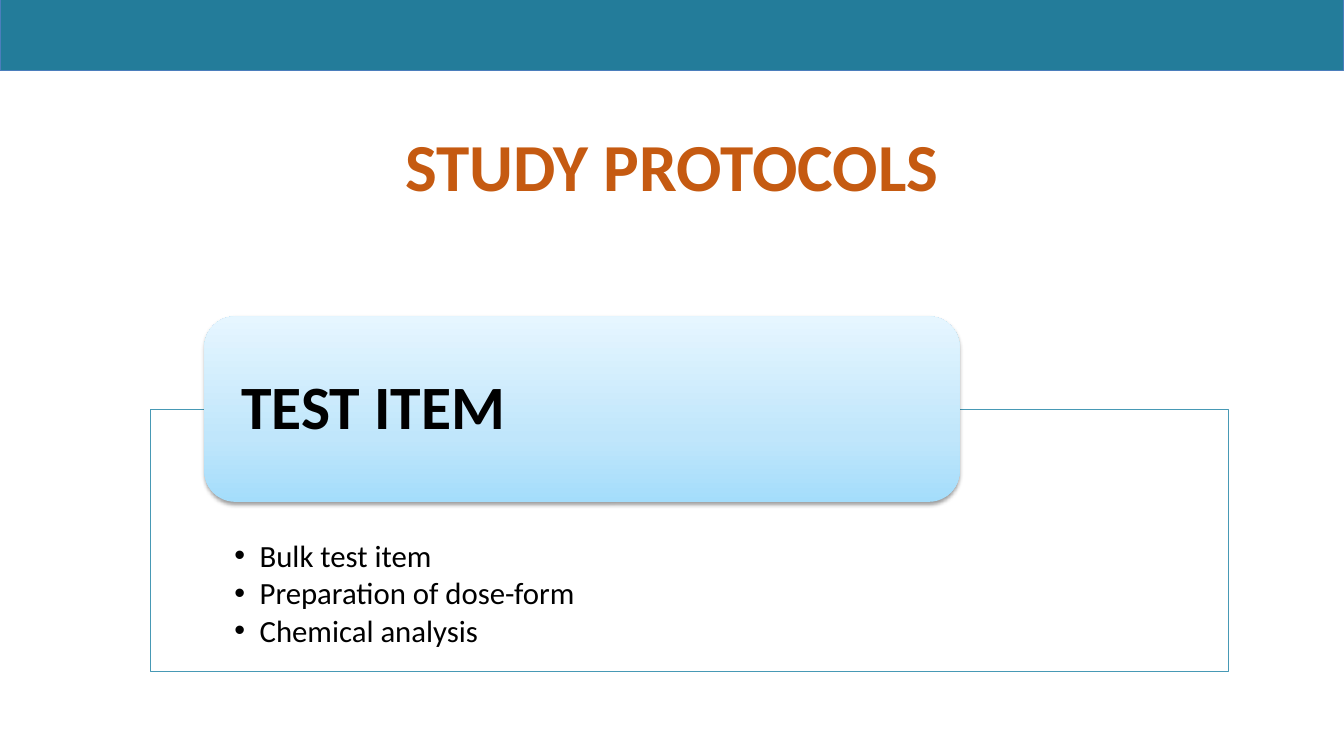
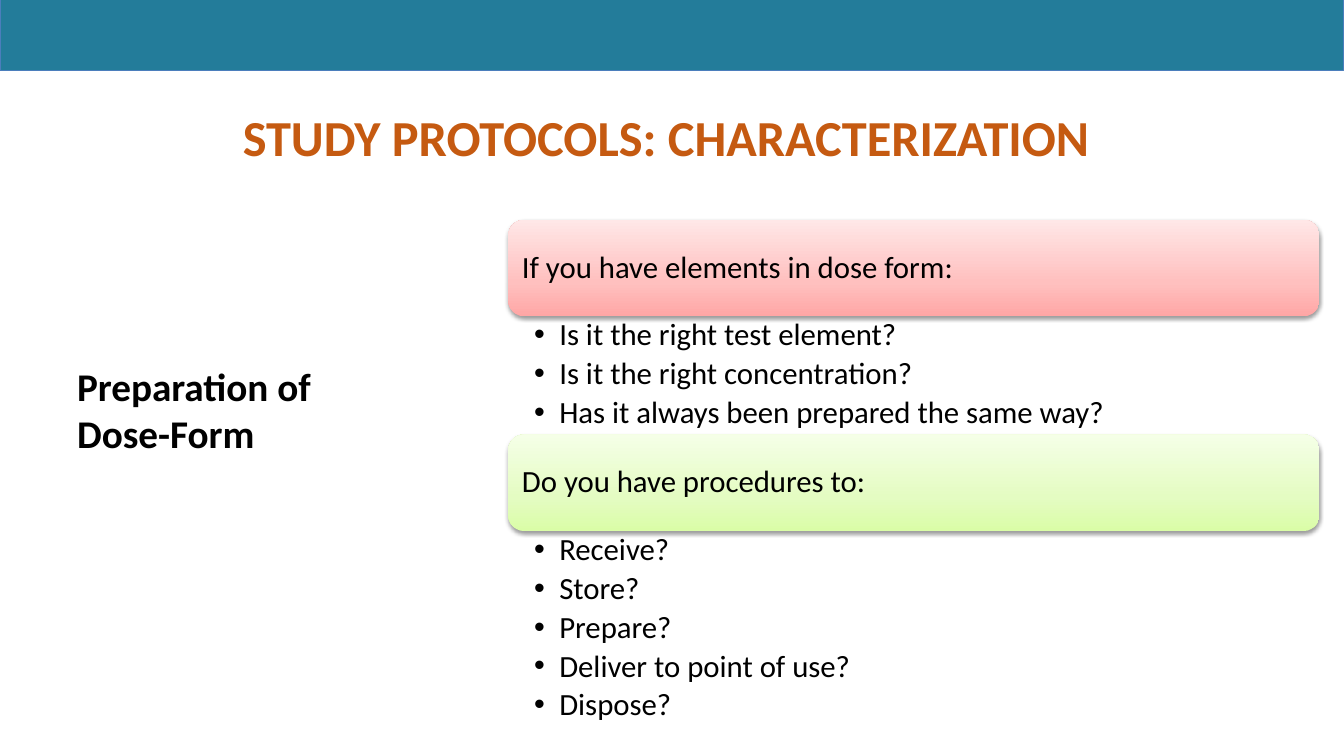
from copy import deepcopy

from lxml import etree
from pptx import Presentation
from pptx.dml.color import RGBColor
from pptx.enum.shapes import MSO_SHAPE
from pptx.enum.text import MSO_ANCHOR, PP_ALIGN
from pptx.oxml.ns import qn
from pptx.util import Pt

PAGE_WIDTH, PAGE_HEIGHT = 960, 540
FONT = "Calibri"
BLACK, WHITE = "000000", "FFFFFF"
BAND_FILL, BAND_LINE = "237C9A", "4B7EBC"
TITLE_COLOR, PANEL_LINE = "C55A11", "4799B5"
# Gradient colours run from the bottom of a card to its top.
GRADIENT_POSITIONS = (0, 0.35, 1)
BLUE = ("A4DDFB", "C0E6FB", "E6F6FF")
RED = ("FFA6A5", "FFC0BF", "FFE7E7")
GREEN = ("DAFDA7", "E4FCC2", "F5FFE7")
TITLE_INSETS = (7.2, 3.6, 7.2, 0)

TEST_ITEM_TOPICS = ["Bulk test item", "Preparation of dose-form", "Chemical analysis"]
QUESTION_GROUPS = [
    ("If you have elements in dose form:", RED, [
        "Is it the right test element?",
        "Is it the right concentration?",
        "Has it always been prepared the same way?",
    ]),
    ("Do you have procedures to:", GREEN, [
        "Receive?", "Store?", "Prepare?", "Deliver to point of use?", "Dispose?",
    ]),
]
CARD_LEFT, CARD_TOP, CARD_WIDTH, CARD_HEIGHT = 363, 157, 579.5, 69
LIST_PITCH = 28.8


def rgb(color):
    return RGBColor.from_string(color)


def add_paint(page, kind, bounds, line=None):
    """Add a preset shape without shadow, outlined only if a line colour is given."""
    shape = page.shapes.add_shape(kind, *map(Pt, bounds))
    shape.shadow.inherit = False
    if line:
        shape.line.color.rgb = rgb(line)
        shape.line.width = Pt(0.75)
    else:
        shape.line.fill.background()
    return shape


def add_textbox(page, bounds):
    return page.shapes.add_textbox(*map(Pt, bounds))


def add_bullet(paragraph):
    properties = paragraph._p.get_or_add_pPr()
    properties.set("marL", str(Pt(18)))
    properties.set("indent", str(Pt(-18)))
    etree.SubElement(properties, qn("a:buFont")).set("typeface", "Arial")
    etree.SubElement(properties, qn("a:buChar")).set("char", "•")


def write(box, lines, size, insets, color=BLACK, bold=False, align=PP_ALIGN.LEFT,
          anchor=MSO_ANCHOR.TOP, bullets=False, spacing=None, after=None):
    """Fill a box with one paragraph a line; insets are left, top, right, bottom."""
    frame = box.text_frame
    frame.word_wrap = True
    frame.vertical_anchor = anchor
    (frame.margin_left, frame.margin_top,
     frame.margin_right, frame.margin_bottom) = map(Pt, insets)
    for index, line in enumerate(lines):
        paragraph = frame.add_paragraph() if index else frame.paragraphs[0]
        paragraph.text = line
        if bullets:
            add_bullet(paragraph)
        paragraph.alignment = align
        if spacing:
            paragraph.line_spacing = spacing
        if after:
            paragraph.space_after = Pt(after)
        font = paragraph.font
        font.name, font.size, font.bold = FONT, Pt(size), bold
        font.color.rgb = rgb(color)


def fill_gradient(shape, colors):
    shape.fill.gradient()
    shape.fill.gradient_angle = 90
    stop_list = shape._element.spPr.find(".//" + qn("a:gsLst"))
    stop_list.append(deepcopy(stop_list[0]))
    for stop, position, color in zip(shape.fill.gradient_stops, GRADIENT_POSITIONS, colors):
        stop.position = position
        stop.color.rgb = rgb(color)


def add_soft_shadow(shape):
    effects = shape._element.spPr.find(qn("a:effectLst"))
    shadow = etree.SubElement(effects, qn("a:outerShdw"), blurRad=str(Pt(3.1)),
                              dist=str(Pt(1.6)), dir="5400000", rotWithShape="0")
    color = etree.SubElement(shadow, qn("a:srgbClr"), val=BLACK)
    etree.SubElement(color, qn("a:alpha"), val="38000")


def add_card(page, bounds, text, colors, size, inset, bold=False):
    card = add_paint(page, MSO_SHAPE.ROUNDED_RECTANGLE, bounds)
    fill_gradient(card, colors)
    add_soft_shadow(card)
    write(card, [text], size, (inset, 0, inset, 0), bold=bold,
          anchor=MSO_ANCHOR.MIDDLE, spacing=0.9)


def add_page(deck, title, title_top, title_size):
    """Add a blank page with the shared top band and title."""
    page = deck.slides.add_slide(deck.slide_layouts[6])
    band = add_paint(page, MSO_SHAPE.RECTANGLE, (0, 0, PAGE_WIDTH, 50.4), BAND_LINE)
    band.fill.solid()
    band.fill.fore_color.rgb = rgb(BAND_FILL)
    write(add_textbox(page, (48, title_top, 864, 47)), [title], title_size,
          TITLE_INSETS, TITLE_COLOR, bold=True, align=PP_ALIGN.CENTER)
    return page


def build_test_item(deck):
    page = add_page(deck, "STUDY PROTOCOLS", 85, 48)
    panel = add_paint(page, MSO_SHAPE.RECTANGLE, (107.5, 292.5, 770, 187), PANEL_LINE)
    panel.fill.solid()
    panel.fill.fore_color.rgb = rgb(WHITE)
    write(panel, TEST_ITEM_TOPICS, 22, (60, 93.6, 60, 12),
          bullets=True, spacing=0.9, after=3)
    add_card(page, (146, 226, 539.5, 132.5), "TEST ITEM", BLUE, 44, 20, bold=True)


def build_characterization(deck):
    page = add_page(deck, "STUDY PROTOCOLS: CHARACTERIZATION ", 72, 36)
    write(add_textbox(page, (48, 255.5, 240, 168.5)), ["Preparation of Dose-Form"],
          28, TITLE_INSETS, bold=True)
    top = CARD_TOP
    for heading, colors, questions in QUESTION_GROUPS:
        add_card(page, (CARD_LEFT, top, CARD_WIDTH, CARD_HEIGHT), heading, colors, 22, 6.5)
        top += CARD_HEIGHT
        list_height = LIST_PITCH * len(questions) - 2
        question_list = add_textbox(page, (CARD_LEFT, top, CARD_WIDTH, list_height))
        write(question_list, questions, 22, (18.5, 2, 12, 2),
              bullets=True, spacing=0.9, after=4)
        top += list_height


def main():
    deck = Presentation()
    deck.slide_width, deck.slide_height = Pt(PAGE_WIDTH), Pt(PAGE_HEIGHT)
    build_test_item(deck)
    build_characterization(deck)
    deck.save("out.pptx")


if __name__ == "__main__":
    main()
